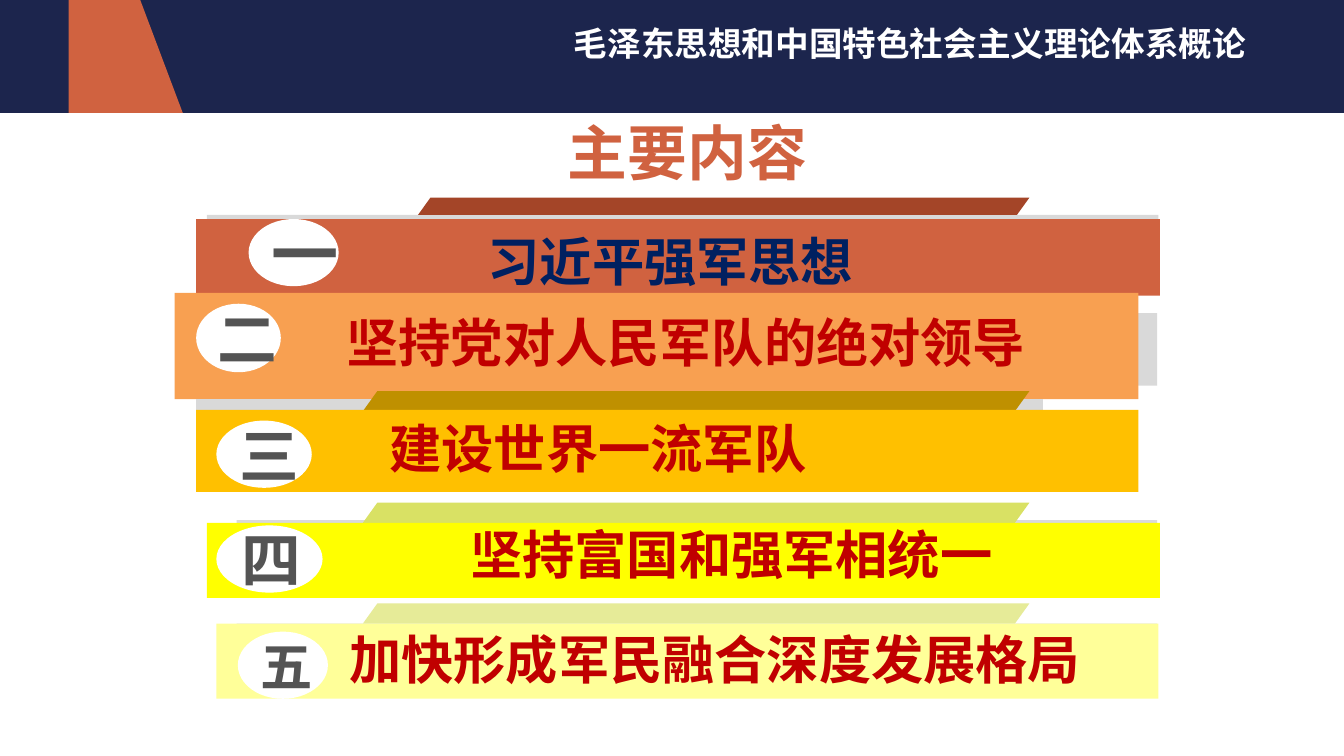
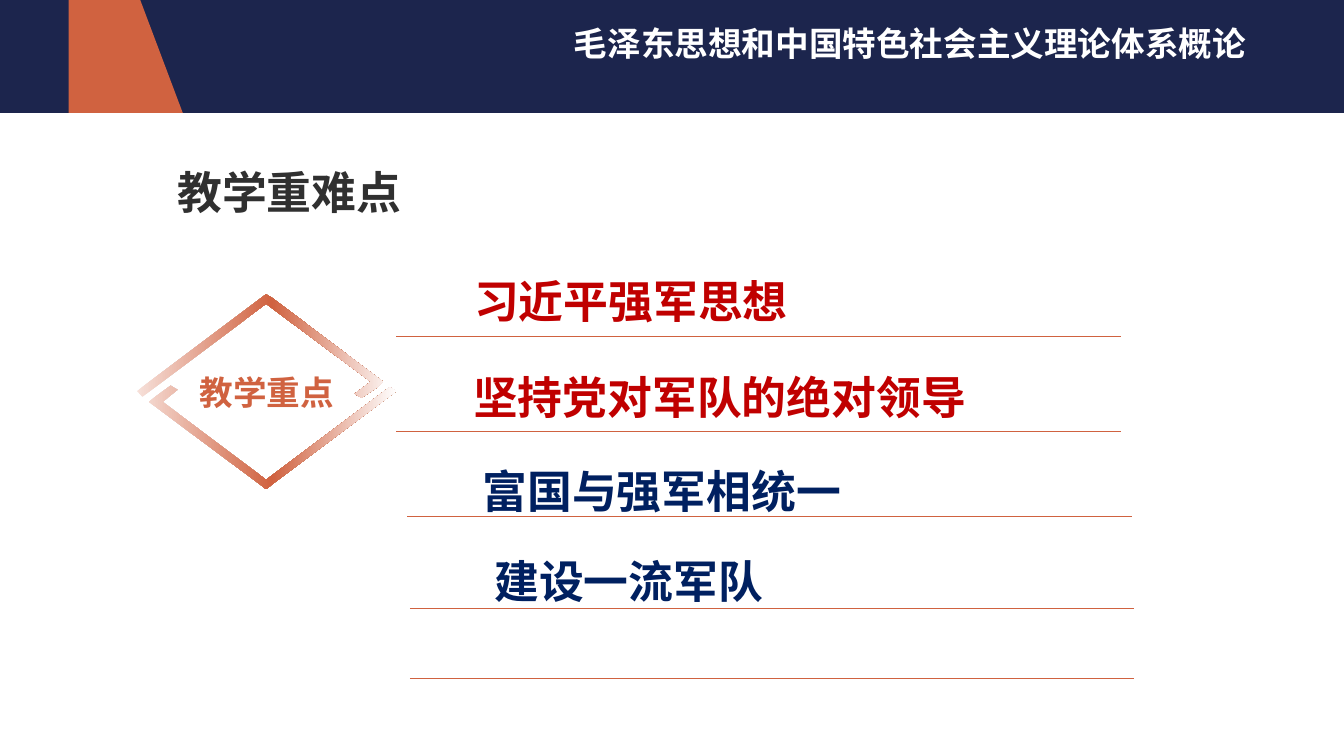
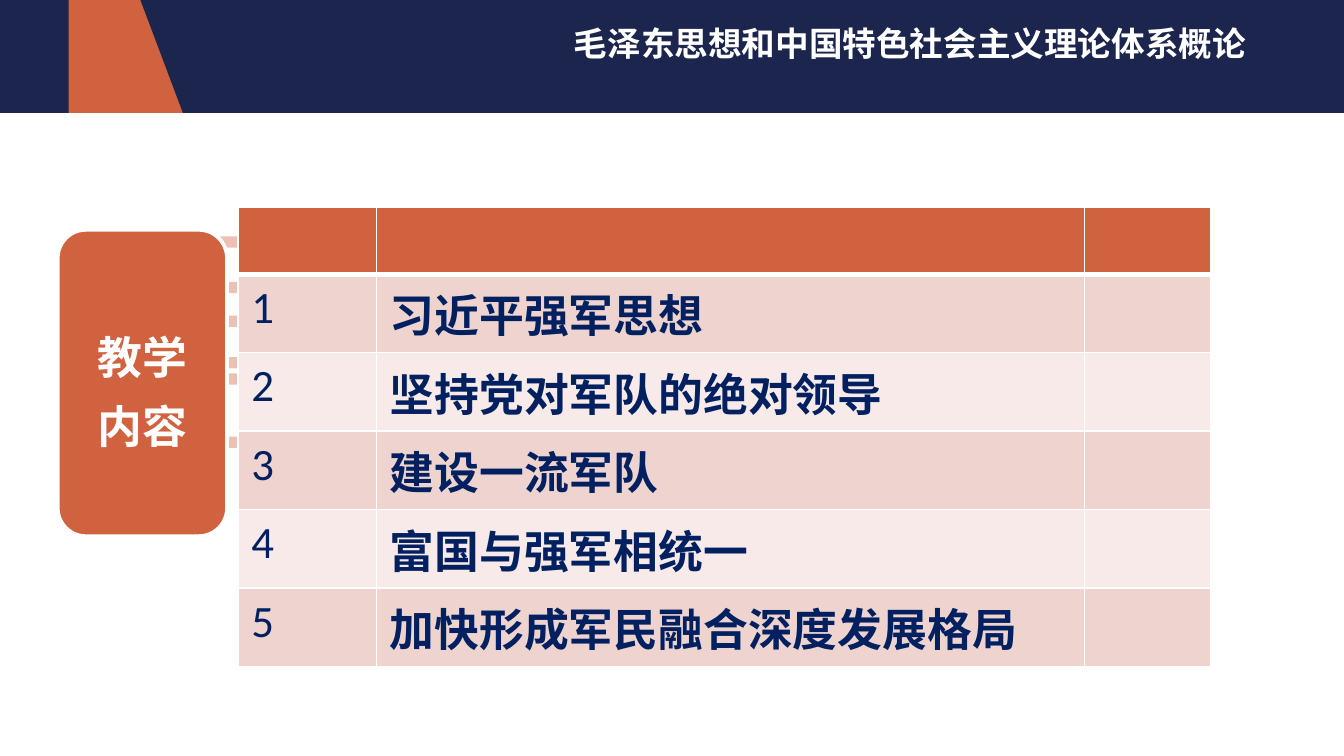
"""Builds three lecture slides on a grid 100 columns wide, with square cells."""
from dataclasses import dataclass

from lxml import etree
from pptx import Presentation
from pptx import util as u
from pptx.dml.color import RGBColor
from pptx.enum import shapes, text
from pptx.oxml import parse_xml
from pptx.oxml.ns import nsdecls, qn


@dataclass(frozen=True)
class Theme:
    navy: str = "1C254D"
    rust: str = "D06240"
    white: str = "FFFFFF"
    ink: str = "303030"
    numeral: str = "545454"
    blue: str = "002060"
    red: str = "C00000"
    backing: str = "D9D9D9"
    blush: str = "ECC0B3"
    fade: str = "F6E0D9"
    bands: tuple = ("EED3CF", "F7EAE8")
    cjk: str = "Noto Sans CJK SC"
    body: str = "Calibri"
    plain: str = "Arial"
    digits: str = "Lato"
    small: int = 18
    medium: int = 24
    large: int = 28
    huge: int = 32


T = Theme()
KIND, ALIGN, ANCHOR = shapes.MSO_SHAPE, text.PP_ALIGN, text.MSO_ANCHOR

prs = Presentation()
prs.slide_width = u.Inches(10)
prs.slide_height = prs.slide_width * 9 // 16
CELL = prs.slide_width // 100


def put(host, kind, box, fill=None, edge=None, weight=1):
    """Add a shape, or a text box when kind is None, placed in grid cells."""
    place = [round(n * CELL) for n in box]
    if kind is None:
        return host.shapes.add_textbox(*place)
    sp = host.shapes.add_shape(kind, *place)
    sp.shadow.inherit = False
    if fill:
        sp.fill.solid()
        sp.fill.fore_color.rgb = RGBColor.from_string(fill)
    else:
        sp.fill.background()
    if edge:
        sp.line.color.rgb = RGBColor.from_string(edge)
        sp.line.width = u.Pt(weight)
    else:
        sp.line.fill.background()
    return sp


def write(tf, words, size, color, face, bold=True, align=ALIGN.LEFT,
          anchor=ANCHOR.TOP, inset=(1, 0.5, 1, 0.5), spacing=None):
    """Write one run into a text frame, with insets in grid cells."""
    tf.word_wrap = True
    tf.vertical_anchor = anchor
    tf.margin_left, tf.margin_top, tf.margin_right, tf.margin_bottom = [
        round(n * CELL) for n in inset]
    p = tf.paragraphs[0]
    p.alignment, p.line_spacing = align, spacing
    r = p.add_run()
    r.text = words
    r.font.size, r.font.bold, r.font.name = u.Pt(size), bold, face
    r.font.color.rgb = RGBColor.from_string(color)
    etree.SubElement(r._r.get_or_add_rPr(), qn("a:ea"), typeface=T.cjk)


for _ in range(3):
    s = prs.slides.add_slide(prs.slide_layouts[6])
    put(s, KIND.RECTANGLE, (0, 0, 100, 8.4), T.navy)
    corners = [(round(x * CELL), round(y * CELL))
               for x, y in ((5.1, -0.1), (10.4, -0.1), (13.6, 8.4), (5.1, 8.4))]
    fb = s.shapes.build_freeform(*corners[0])
    fb.add_line_segments(corners[1:])
    sp = fb.convert_to_shape()
    sp.shadow.inherit = False
    sp.fill.solid()
    sp.fill.fore_color.rgb = RGBColor.from_string(T.rust)
    sp.line.fill.background()
    sp = put(s, None, (12.2, 1.55, 86.2, 5.7))
    write(sp.text_frame, "毛泽东思想和中国特色社会主义理论体系概论", T.small, T.white,
          T.cjk, inset=(30.5, 0.5, 1, 0.5), spacing=0.9)

contents, focus, outline = prs.slides

s = contents
sp = put(s, None, (40.1, 8.1, 22.1, 6.4))
write(sp.text_frame, "主要内容", T.huge, T.rust, T.cjk, align=ALIGN.CENTER)
entries = [
    ("一", 36, (18.5, 16.3, 6.7, 5), (15.4, 16, 70.8, 5.4),
     (31.1, 14.7, 45.5, 1.3), "A44528", (14.6, 16.3, 71.7, 5.7), T.rust),
    ("二", T.huge, (14.6, 22.6, 6.3, 5.1), (17.6, 23.3, 68.5, 5.4),
     None, None, (13, 21.8, 71.7, 7.9), "F8A051"),
    ("三", T.huge, (16.1, 31.3, 7.1, 5), (14.6, 29.7, 63, 6.3),
     (27, 29.1, 49.6, 1.5), "BF9000", (14.6, 30.5, 70.1, 6.1), "FFC000"),
    ("四", T.huge, (16.1, 39.1, 7.9, 5), (17.6, 38.7, 68.5, 5.4),
     (27, 37.4, 49.6, 1.5), "D9E164", (15.4, 38.9, 70.9, 5.6), "FFFF00"),
    ("五", T.large, (17.7, 47, 6.7, 5), (17.6, 46.4, 68.5, 5.4),
     (27, 44.9, 49.6, 1.5), "E6EB98", (16.1, 46.4, 70.1, 5.6), "FFFF99"),
]
bars = []
for numeral, size, disc, backing, lid, lid_fill, bar, bar_fill in entries:
    put(s, KIND.RECTANGLE, backing, T.backing)
    if lid:
        sp = put(s, KIND.PARALLELOGRAM, lid, lid_fill)
        sp.adjustments[0] = 0.72
    bars.append(put(s, KIND.RECTANGLE, bar, bar_fill))
    sp = put(s, KIND.OVAL, disc, T.white)
    write(sp.text_frame, numeral, size, T.numeral, T.digits, align=ALIGN.CENTER,
          anchor=ANCHOR.MIDDLE, inset=(0.7, 0.4, 0.7, 0.4))
write(bars[0].text_frame, "习近平强军思想", T.large, T.blue, T.body,
      anchor=ANCHOR.MIDDLE, inset=(21.7, 0.5, 0, 0))
for words, face, box, indent in (
        ("坚持党对人民军队的绝对领导", T.cjk, (24.8, 22.6, 57.5, 5.7), 1),
        ("建设世界一流军队", T.body, (28, 30.5, 55.1, 5.7), 1),
        ("坚持富国和强军相统一", T.body, (14.6, 38.4, 65.7, 5.7), 20.4),
        ("加快形成军民融合深度发展格局", T.body, (15.4, 46.2, 71.7, 5.7), 10.6)):
    sp = put(s, None, box)
    write(sp.text_frame, words, T.large, T.red, face, inset=(indent, 0.5, 1, 0.5))

s = focus
sp = put(s, None, (12.5, 11, 47.7, 5.7))
write(sp.text_frame, "教学重难点", T.medium, T.ink, T.cjk, anchor=ANCHOR.BOTTOM,
      inset=(0.7, 0.4, 0.7, 0.4), spacing=0.9)
lower = [(12.7, 28.7), (13.2, 29), (12.1, 29.9), (19.8, 35.7), (29, 28.8),
         (29.5, 29.1), (20.3, 36), (19.8, 36.4), (19.3, 36), (11.1, 29.9),
         (11.6, 29.5)]
upper = [(19.8, 21.9), (20.3, 22.2), (28.5, 28.4), (28.1, 28.8), (26.9, 29.6),
         (26.4, 29.3), (27.6, 28.4), (19.8, 22.6), (10.6, 29.5), (10.2, 29.1)]
lower, upper = [[(round(x * CELL), round(y * CELL)) for x, y in half]
                for half in (lower, upper)]
fb = s.shapes.build_freeform(*lower[0])
fb.add_line_segments(lower[1:])
fb.move_to(*upper[0])
fb.add_line_segments(upper[1:])
sp = fb.convert_to_shape()
sp.shadow.inherit = False
sp.line.fill.background()
stops = "".join(f'<a:gs pos="{pos}000"><a:srgbClr val="{color}"/></a:gs>'
                for pos, color in ((0, T.fade), (52, T.rust), (100, T.white)))
sp._element.spPr.find(qn("a:custGeom")).addnext(parse_xml(
    f'<a:gradFill {nsdecls("a")}><a:gsLst>{stops}</a:gsLst>'
    '<a:lin ang="0" scaled="0"/></a:gradFill>'))
write(sp.text_frame, "教学重点", T.small, T.rust, T.body, align=ALIGN.CENTER,
      anchor=ANCHOR.MIDDLE)
for left, top in ((29.5, 25), (29.5, 32.1), (30.3, 38.4), (30.5, 45.3), (30.5, 50.5)):
    x1, x2, y = [round(n * CELL) for n in (left, left + 53.9, top)]
    sp = s.shapes.add_connector(shapes.MSO_CONNECTOR.STRAIGHT, x1, y, x2, y)
    sp.line.color.rgb = RGBColor.from_string(T.rust)
    sp.line.width = u.Pt(0.5)
    etree.SubElement(sp._element.spPr, qn("a:effectLst"))
for words, color, box, indent, spacing in (
        ("习近平强军思想", T.red, (34.3, 18.7, 35, 5.7), 1, 1.3),
        ("坚持党对军队的绝对领导", T.red, (31.9, 25.8, 42.5, 6.3), 3.3, 1.3),
        ("富国与强军相统一", T.blue, (31.9, 32.8, 43.5, 6.3), 4, 1.3),
        ("建设一流军队", T.blue, (35.8, 40.7, 22.2, 5), 1, None)):
    sp = put(s, None, box)
    write(sp.text_frame, words, T.medium, color, T.plain,
          inset=(indent, 0.5, 1, 0.5), spacing=spacing)

s = outline
group = s.shapes.add_group_shape()
for box in ((8.6, 18, 10.3, 5.9), (15.7, 21.4, 11.8, 6.8),
            (25, 22.6, 11.8, 6.8), (10.5, 27, 10.3, 5.9)):
    put(group, KIND.ROUNDED_RECTANGLE, box, edge=T.blush, weight=6)
sp = put(group, KIND.ROUNDED_RECTANGLE, (4.3, 17.1, 12.6, 22.8), T.rust, T.white, 2)
write(sp.text_frame, "教学内容", T.medium, T.white, T.cjk, align=ALIGN.CENTER,
      anchor=ANCHOR.MIDDLE, spacing=1.3)

topics = [("习近平强军思想", T.cjk), ("坚持党对军队的绝对领导", T.plain),
          ("建设一流军队", T.plain), ("富国与强军相统一", T.plain),
          ("加快形成军民融合深度发展格局", T.plain)]
place = [round(n * CELL) for n in (17.7, 15.4, 72.4, 34.2)]
table = s.shapes.add_table(len(topics) + 1, 3, *place).table
for column, width in zip(table.columns, (10.3, 52.7, 9.4)):
    column.width = round(width * CELL)
for i, row in enumerate(table.rows):
    row.height = round((5.84 if i else 5) * CELL)
    for cell in row.cells:
        cell.fill.solid()
        cell.fill.fore_color.rgb = RGBColor.from_string(
            T.bands[(i - 1) % 2] if i else T.rust)
        for k, side in enumerate(("lnL", "lnR", "lnT", "lnB")):
            thick = (i == 0 and side == "lnB") or (i == 1 and side == "lnT")
            cell._tc.get_or_add_tcPr().insert(k, parse_xml(
                f'<a:{side} {nsdecls("a")} w="{u.Pt(3 if thick else 1)}"><a:solidFill>'
                f'<a:srgbClr val="{T.white}"/></a:solidFill></a:{side}>'))
for i, (words, face) in enumerate(topics, 1):
    for j, content, font, bold in ((0, str(i), T.body, False), (1, words, face, True)):
        cell = table.cell(i, j)
        write(cell.text_frame, content, T.medium, T.blue, font, bold,
              align=ALIGN.LEFT if j else ALIGN.JUSTIFY)
        cell.margin_left = cell.margin_right = CELL
        cell.margin_top = cell.margin_bottom = CELL // 2

prs.save("out.pptx")
